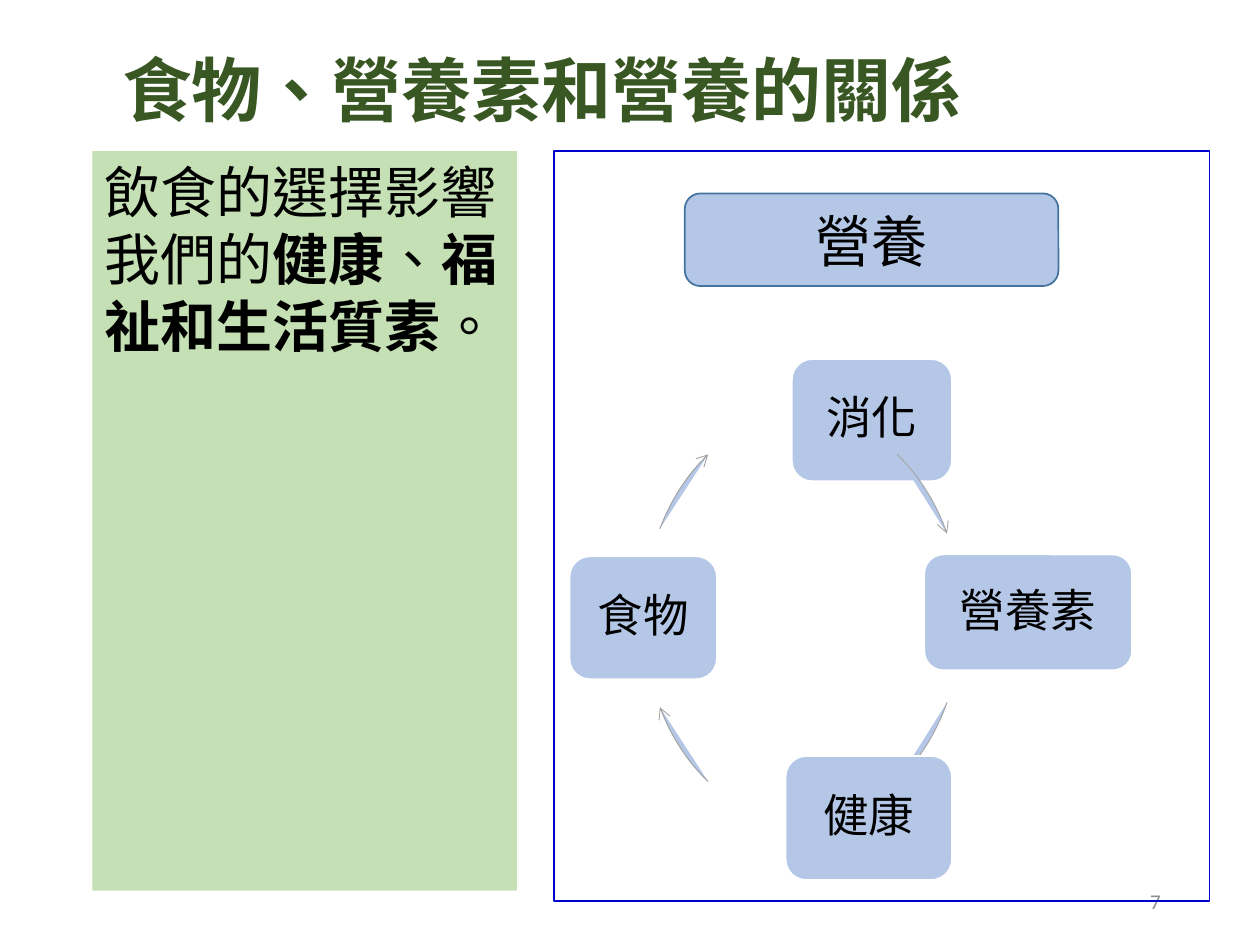
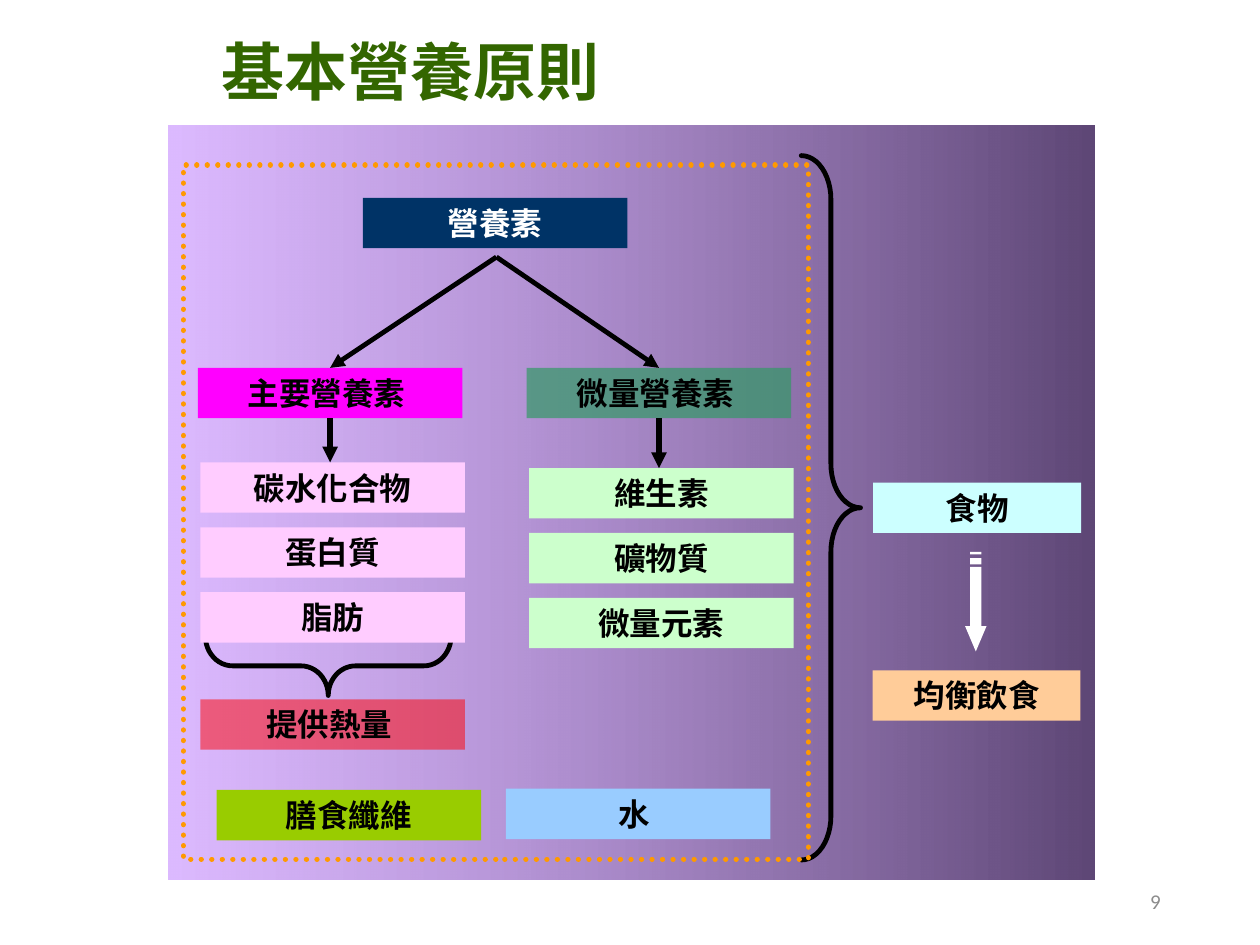
from dataclasses import dataclass, field
from math import cos, radians, sin
from typing import Any, NamedTuple, Optional

from lxml.etree import SubElement
from pptx import Presentation
from pptx.dml.color import RGBColor
from pptx.enum.dml import MSO_LINE_DASH_STYLE as Dash
from pptx.enum.shapes import MSO_CONNECTOR_TYPE as ConnectorKind
from pptx.enum.shapes import MSO_SHAPE as Kind
from pptx.enum.text import MSO_ANCHOR as Anchor
from pptx.enum.text import PP_ALIGN as Align
from pptx.oxml.ns import qn
from pptx.util import Inches, Pt

COLUMNS, ROWS = 100, 75
CELL = Inches(10) // COLUMNS
TOP, BOTTOM = 0, 2

BLACK, WHITE = "000000", "FFFFFF"
NODE_BLUE = "B4C7E7"
LANGUAGE = "zh-TW"


class Area(NamedTuple):
    column: float
    row: float
    columns: float
    rows: float


class Point(NamedTuple):
    column: float
    row: float


class Stroke(NamedTuple):
    color: str
    points: float
    dash: Optional[Any] = None
    cap: Optional[str] = None


class Run(NamedTuple):
    text: str
    bold: bool = False


@dataclass
class TextStyle:
    size: float
    color: str = BLACK
    bold: bool = False
    font: str = "Calibri"
    frame: dict = field(default_factory=lambda: {"word_wrap": True})
    paragraph: dict = field(default_factory=dict)


@dataclass
class Box:
    area: Area
    runs: tuple = ()
    style: Optional[TextStyle] = None
    fill: Optional[str] = None
    opacity: int = 100
    stroke: Optional[Stroke] = None
    kind: Any = Kind.RECTANGLE
    adjustments: tuple = ()
    rotation: float = 0


class CycleStep(NamedTuple):
    label: str
    area: Area
    start_angle: float
    end_angle: float
    curve_color: str


CENTERED = {"alignment": Align.CENTER}
MIDDLE = {"word_wrap": True, "vertical_anchor": Anchor.MIDDLE}
TITLE = TextStyle(40, "385723", True)
TITLE_CENTERED = TextStyle(36, "336600", True, "Lato", {"word_wrap": False}, CENTERED)
PAGE_NUMBER = TextStyle(12, "8C8C8C", frame=MIDDLE, paragraph={"alignment": Align.RIGHT})
BODY = TextStyle(32)
HEADING = TextStyle(32, frame=MIDDLE, paragraph=CENTERED)
NODE = TextStyle(26, frame=MIDDLE, paragraph={**CENTERED, "line_spacing": 0.9})
LABEL = TextStyle(18, bold=True, paragraph=CENTERED)
LABEL_LIGHT = TextStyle(18, WHITE, True, paragraph=CENTERED)

CYCLE_AREA = Area(51.1, 32.9, 25.2, 32.3)
BRACE = Stroke(BLACK, 2.75, cap="rnd")
LABEL_COLUMNS, LABEL_ROWS = 21, 4
FOOD_COLUMNS = 16.5
ITEM_STEP = 5.15


def rgb(color: str) -> RGBColor:
    return RGBColor.from_string(color)


def grid(cells: float) -> int:
    return round(cells * CELL)


def apply_format(target: Any, values: dict) -> None:
    for name, value in values.items():
        setattr(target, name, value)


def set_opacity(fill_parent: Any, percent: int) -> None:
    color = next(fill_parent.iter(qn("a:srgbClr")))
    SubElement(color, qn("a:alpha")).set("val", str(percent * 1000))


def paint_line(line: Any, stroke: Optional[Stroke]) -> None:
    if stroke is None:
        line.fill.background()
        return
    line.color.rgb = rgb(stroke.color)
    line.width = Pt(stroke.points)
    if stroke.dash is not None:
        line.dash_style = stroke.dash
    if stroke.cap:
        line._get_or_add_ln().set("cap", stroke.cap)


def add_arrowhead(line: Any, kind: str) -> None:
    SubElement(line._get_or_add_ln(), qn("a:tailEnd")).set("type", kind)


def paint(shape: Any, fill: Optional[str], stroke: Optional[Stroke]) -> None:
    shape.shadow.inherit = False
    if fill:
        shape.fill.solid()
        shape.fill.fore_color.rgb = rgb(fill)
    else:
        shape.fill.background()
    paint_line(shape.line, stroke)


def write_text(shape: Any, runs: tuple, style: TextStyle) -> None:
    frame = shape.text_frame
    paragraph = frame.paragraphs[0]
    apply_format(frame, {"vertical_anchor": Anchor.TOP, **style.frame})
    apply_format(paragraph, {"alignment": Align.LEFT, **style.paragraph})
    for text, bold in runs:
        run = paragraph.add_run()
        run.text = text
        run.font.color.rgb = rgb(style.color)
        run._r.get_or_add_rPr().set("lang", LANGUAGE)
        apply_format(run.font, {
            "name": style.font,
            "size": Pt(style.size),
            "bold": bold or style.bold,
        })


def draw_box(slide: Any, box: Box) -> Any:
    shape = slide.shapes.add_shape(box.kind, *map(grid, box.area))
    paint(shape, box.fill, box.stroke)
    shape.rotation = box.rotation
    for index, value in enumerate(box.adjustments):
        shape.adjustments[index] = value
    if box.opacity < 100:
        set_opacity(shape._element.spPr, box.opacity)
    if box.style:
        write_text(shape, box.runs, box.style)
    return shape


def draw_text(slide: Any, area: Area, text: str, style: TextStyle) -> None:
    shape = slide.shapes.add_textbox(*map(grid, area))
    write_text(shape, (Run(text),), style)


def draw_page_number(slide: Any, number: int) -> None:
    draw_text(slide, Area(70.6, 69.5, 22.5, 4), str(number), PAGE_NUMBER)


def draw_label(slide: Any, column: float, row: float, text: str, fill: str,
               columns: float = LABEL_COLUMNS, opacity: int = 100,
               style: TextStyle = LABEL) -> Any:
    area = Area(column, row, columns, LABEL_ROWS)
    return draw_box(slide, Box(area, (Run(text),), style, fill, opacity))


def draw_outline(slide: Any, contours: list, closed: bool) -> Any:
    points = [[tuple(map(grid, point)) for point in contour] for contour in contours]
    builder = slide.shapes.build_freeform(*points[0][0])
    for index, contour in enumerate(points):
        if index:
            builder.move_to(*contour[0])
        builder.add_line_segments(contour[1:], close=closed)
    return builder.convert_to_shape()


def extend_frame(shape: Any, area: Area) -> None:
    left, top, width, height = map(grid, area)
    shift = {"x": shape.left - left, "y": shape.top - top}
    outline = next(shape._element.iter(qn("a:path")))
    apply_format(shape, {"left": left, "top": top, "width": width, "height": height})
    for name, length in (("w", width), ("h", height)):
        outline.set(name, str(length))
    for point in outline.iter(qn("a:pt")):
        for axis, distance in shift.items():
            point.set(axis, str(int(point.get(axis)) + distance))


def draw_curve(slide: Any, step: CycleStep, segments: int = 16) -> None:
    column, row, columns, rows = CYCLE_AREA
    sweep = step.end_angle - step.start_angle
    angles = [radians(step.start_angle + sweep * index / segments)
              for index in range(segments + 1)]
    arc = [Point(column + columns * (1 + cos(angle)) / 2, row + rows * (1 + sin(angle)) / 2)
           for angle in angles]
    shape = draw_outline(slide, [arc], False)
    extend_frame(shape, CYCLE_AREA)
    paint(shape, NODE_BLUE, Stroke(step.curve_color, 0.5))
    add_arrowhead(shape.line, "arrow")


def draw_arrow(slide: Any, start: Point, end: Point, points: float) -> Any:
    connector = slide.shapes.add_connector(
        ConnectorKind.STRAIGHT, *map(grid, (*start, *end)))
    paint_line(connector.line, Stroke(BLACK, points))
    add_arrowhead(connector.line, "triangle")
    SubElement(connector._element.spPr, qn("a:effectLst"))
    return connector


def draw_striped_arrow(slide: Any, center: float) -> None:
    shaft, head = 0.45, 0.85
    left, right = center - shaft, center + shaft
    stripes = [
        [(left, top), (right, top), (right, bottom), (left, bottom)]
        for top, bottom in ((43.8, 44), (44.3, 44.8))
    ]
    body = [(left, 45), (right, 45), (right, 49.7), (center + head, 49.7),
            (center, 51.7), (center - head, 49.7), (left, 49.7)]
    paint(draw_outline(slide, [*stripes, body], True), WHITE, None)


def draw_gradient_panel(slide: Any) -> None:
    panel = draw_box(slide, Box(Area(13.35, 10, 73.5, 59.8)))
    panel.fill.gradient()
    panel.fill.gradient_angle = 0
    for stop, color in zip(panel.fill.gradient_stops, ("CC99FF", "5E4776")):
        stop.color.rgb = rgb(color)
    set_opacity(panel._element.spPr, 68)


def build_relationship_slide(slide: Any) -> None:
    sentence = (Run("飲食的選擇影響我們的"), Run("健康", True), Run("、"),
                Run("福祉和生活質素", True), Run("。"))
    cycle = (
        CycleStep("消化", Area(62.85, 28.5, 12.7, 9.7), -53.5, -24.5, "A5A5A5"),
        CycleStep("營養素", Area(73.35, 44, 16.5, 9.2), 24.5, 53.5, "A3A3A3"),
        CycleStep("健康", Area(62.35, 60, 13.2, 9.85), 126.5, 154, "A0A0A0"),
        CycleStep("食物", Area(45.2, 44.15, 11.7, 9.75), 206, 233.5, "9E9E9E"),
    )
    draw_box(slide, Box(Area(7.33, 12, 33.7, 58.7), sentence, BODY, "C5E0B4"))
    draw_page_number(slide, 7)
    for step in cycle:
        draw_box(slide, Box(step.area, (Run(step.label),), NODE, NODE_BLUE,
                            stroke=Stroke(WHITE, 1), kind=Kind.ROUNDED_RECTANGLE))
        draw_curve(slide, step)
    draw_box(slide, Box(Area(54.35, 15.35, 29.65, 7.35), (Run("營養"),), HEADING, NODE_BLUE,
                        stroke=Stroke("43739E", 1), kind=Kind.ROUNDED_RECTANGLE))
    draw_text(slide, Area(8.7, 3.2, 78.8, 7.7), "食物、營養素和營養的關係", TITLE)
    draw_box(slide, Box(Area(44, 12, 52, 59.5), stroke=Stroke("0000CC", 1)))


def build_principles_slide(slide: Any) -> None:
    draw_gradient_panel(slide)
    draw_box(slide, Box(Area(23.7, 43.1, 4.7, 19.5), stroke=BRACE, kind=Kind.RIGHT_BRACE,
                        adjustments=(0.46, 0.5), rotation=90))
    draw_box(slide, Box(Area(63.6, 12.35, 4.7, 55.9), stroke=BRACE, kind=Kind.RIGHT_BRACE,
                        adjustments=(0.74, 0.5)))
    draw_box(slide, Box(Area(14.55, 13.1, 49.6, 55.1),
                        stroke=Stroke("FF9900", 3, Dash.ROUND_DOT, "rnd")))
    draw_text(slide, Area(15, 2.1, 35.1, 5.8), "基本營養原則", TITLE_CENTERED)
    draw_label(slide, 28.8, 15.7, "營養素", "003366", style=LABEL_LIGHT)

    groups = (
        ("主要營養素 ", 15.7, "FF00FF", 100, 36.7, "FFCCFF", ("碳水化合物", "蛋白質", "脂肪")),
        ("微量營養素 ", 41.8, "339966", 70, 37.15, "CCFFCC", ("維生素", "礦物質", "微量元素")),
    )
    for name, column, fill, opacity, first_row, item_fill, items in groups:
        heading = draw_label(slide, column, 29.2, name, fill, opacity=opacity)
        for index, item in enumerate(items):
            draw_label(slide, column + 0.2, first_row + index * ITEM_STEP, item, item_fill)
        middle = column + LABEL_COLUMNS / 2
        branch = draw_arrow(slide, Point(39.4, 20.4), Point(middle, 29.2), 2.75)
        branch.end_connect(heading, TOP)
        descent = draw_arrow(slide, Point(middle, 33.2), Point(middle, first_row), 3)
        descent.begin_connect(heading, BOTTOM)

    draw_label(slide, 15.9, 55.5, "提供熱量 ", "FF0000", opacity=50)
    draw_label(slide, 17.2, 62.7, "膳食纖維", "99CC00")
    draw_label(slide, 40.15, 62.6, "水 ", "99CCFF")
    draw_label(slide, 69.3, 38.3, "食物", "CCFFFF", FOOD_COLUMNS)
    draw_label(slide, 69.25, 53.2, "均衡飲食", "FFCC99", FOOD_COLUMNS)
    draw_striped_arrow(slide, 77.45)
    draw_page_number(slide, 9)


def main() -> None:
    presentation = Presentation()
    apply_format(presentation, {"slide_width": COLUMNS * CELL, "slide_height": ROWS * CELL})
    blank = presentation.slide_layouts[6]
    for build in (build_relationship_slide, build_principles_slide):
        build(presentation.slides.add_slide(blank))
    presentation.save("out.pptx")


if __name__ == "__main__":
    main()
